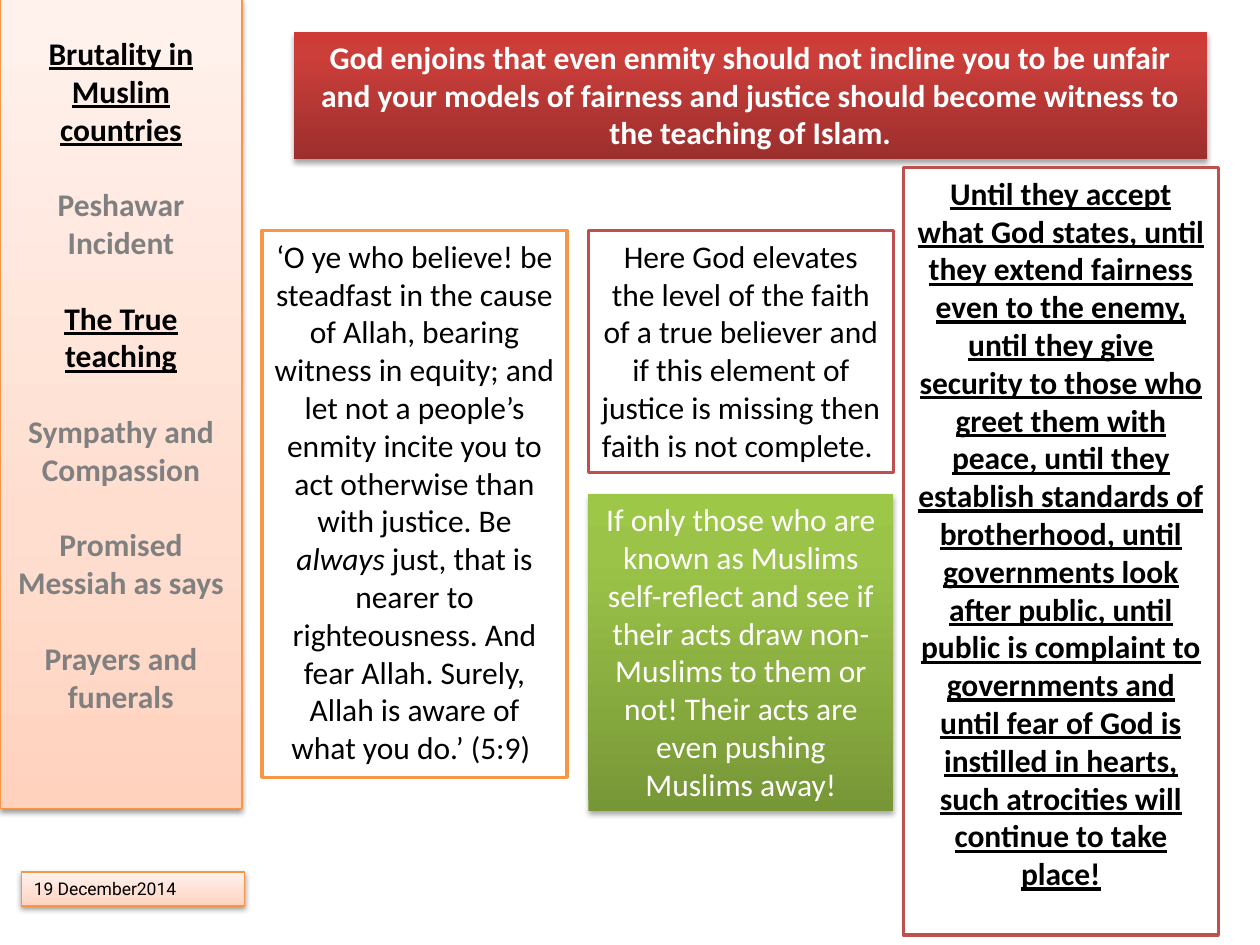
from copy import deepcopy
from dataclasses import dataclass

from lxml.etree import SubElement
from pptx import Presentation
from pptx.dml.color import RGBColor as RGB
from pptx.enum.shapes import MSO_SHAPE as Shape
from pptx.enum.text import MSO_ANCHOR as Anchor, MSO_AUTO_SIZE as AutoSize, PP_ALIGN as Align
from pptx.oxml.ns import qn
from pptx.util import Inches, Pt


@dataclass(frozen=True)
class Theme:
    font: str = "Calibri"
    date_font: str = "Roboto"
    body_size: float = 18
    date_size: float = 10
    black: str = "000000"
    white: str = "FFFFFF"
    muted: str = "808080"
    orange: str = "F79646"
    red: str = "C0504D"
    peach_fade: tuple = ((0, "FFD2BD"), (0.35, "FFDED0"), (1, "FFF2ED"))
    green_fade: tuple = ((0, "779737"), (0.8, "9BC348"), (1, "9DC746"))
    red_fade: tuple = ((0, "9C2F2D"), (0.8, "CB3E3A"), (1, "CE3B37"))


class SlideBuilder:
    def __init__(self, slide, theme):
        self.slide = slide
        self.theme = theme

    def place(self, shape, box):
        shape.left, shape.top, shape.width, shape.height = map(Inches, box)
        shape.shadow.inherit = False
        shape.line.fill.background()
        frame = shape.text_frame
        frame.word_wrap = True
        frame.auto_size = AutoSize.NONE
        frame.vertical_anchor = Anchor.TOP
        return shape

    def rectangle(self, box):
        return self.place(self.slide.shapes.add_shape(Shape.RECTANGLE, *map(Inches, box)), box)

    def outline(self, shape, color, width):
        shape.line.color.rgb = RGB.from_string(color)
        shape.line.width = Pt(width)

    def fade(self, shape, stops, shadow_distance, shadow_opacity):
        shape.fill.gradient()
        shape.fill.gradient_angle = 90
        properties = shape._element.spPr
        stop_list = properties.find(".//" + qn("a:gsLst"))
        stop_list.insert(1, deepcopy(stop_list[0]))
        for stop, (position, color) in zip(shape.fill.gradient_stops, stops):
            stop.position = position
            stop.color.rgb = RGB.from_string(color)
        shadow = SubElement(
            properties.find(qn("a:effectLst")), qn("a:outerShdw"),
            blurRad=str(Pt(3.1)), dist=str(Pt(shadow_distance)), dir="5400000", rotWithShape="0",
        )
        shade = SubElement(shadow, qn("a:srgbClr"), val=self.theme.black)
        SubElement(shade, qn("a:alpha"), val=str(shadow_opacity * 1000))

    def set_text(self, paragraph, text, color, bold=False, underline=False,
                 font=None, size=None, align=Align.CENTER):
        for index, part in enumerate(text.split("*")):
            run = paragraph.add_run()
            run.text = part
            if index % 2:
                run.font.italic = True
        paragraph.alignment = align
        style = paragraph.font
        style.name = font or self.theme.font
        style.size = Pt(size or self.theme.body_size)
        style.color.rgb = RGB.from_string(color)
        style.bold = bold
        style.underline = underline

    def title(self, text, box):
        banner = self.place(self.slide.shapes.title, box)
        self.fade(banner, self.theme.red_fade, 1.8, 35)
        self.set_text(banner.text_frame.paragraphs[0], text, self.theme.white, bold=True)

    def framed_text(self, text, box, border, emphasis=False):
        panel = self.rectangle(box)
        panel.fill.solid()
        panel.fill.fore_color.rgb = RGB.from_string(self.theme.white)
        self.outline(panel, border, 2)
        self.set_text(panel.text_frame.paragraphs[0], text, self.theme.black,
                      bold=emphasis, underline=emphasis)

    def filled_text(self, text, box):
        panel = self.rectangle(box)
        self.fade(panel, self.theme.green_fade, 1.8, 35)
        self.set_text(panel.text_frame.paragraphs[0], text, self.theme.white)

    def peach_panel(self, box):
        panel = self.rectangle(box)
        self.fade(panel, self.theme.peach_fade, 1.6, 38)
        self.outline(panel, self.theme.orange, 0.75)
        return panel.text_frame

    def sidebar(self, topics, active, box):
        frame = self.peach_panel(box)
        frame.margin_top = Inches(0.28)
        for index, topic in enumerate(topics):
            paragraph = frame.add_paragraph() if index else frame.paragraphs[0]
            paragraph.space_after = Pt(21.6)
            current = topic in active
            self.set_text(paragraph, topic, self.theme.black if current else self.theme.muted,
                          bold=True, underline=current)

    def date(self, text, box):
        frame = self.peach_panel(box)
        self.set_text(frame.paragraphs[0], text, self.theme.black, font=self.theme.date_font,
                      size=self.theme.date_size, align=Align.LEFT)


def main():
    presentation = Presentation()
    presentation.slide_width = Inches(10)
    presentation.slide_height = Inches(7.5)
    theme = Theme()
    builder = SlideBuilder(presentation.slides.add_slide(presentation.slide_layouts[5]), theme)

    column_top, column_width = 1.83, 2.42
    verse_left, faith_left = 2.08, 4.67

    builder.title(
        "God enjoins that even enmity should not incline you to be unfair and your models of "
        "fairness and justice should become witness to the teaching of Islam.",
        (2.33, 0.25, 7.25, 1.01),
    )
    builder.filled_text(
        "If only those who are known as Muslims self-reflect and see if their acts draw "
        "non-Muslims to them or not! Their acts are even pushing Muslims away!",
        (faith_left, 3.92, column_width, 2.52),
    )
    builder.framed_text(
        "Here God elevates the level of the faith of a true believer and if this element of "
        "justice is missing then faith is not complete. ",
        (faith_left, column_top, column_width, 1.92), theme.red,
    )
    builder.date("19 December2014", (0.17, 6.92, 1.77, 0.27))
    builder.framed_text(
        "‘O ye who believe! be steadfast in the cause of Allah, bearing witness in equity; "
        "and let not a people’s enmity incite you to act otherwise than with justice. "
        "Be *always* just, that is nearer to righteousness. And fear Allah. Surely, Allah is "
        "aware of what you do.’ (5:9) ",
        (verse_left, column_top, column_width, 4.34), theme.orange,
    )
    builder.sidebar(
        ("Brutality in Muslim countries", "Peshawar Incident", "The True teaching",
         "Sympathy and Compassion", "Promised Messiah as says", "Prayers and funerals"),
        ("Brutality in Muslim countries", "The True teaching"),
        (0, -0.01, 1.92, 6.43),
    )
    builder.framed_text(
        "Until they accept what God states, until they extend fairness even to the enemy, until "
        "they give security to those who greet them with peace, until they establish standards "
        "of brotherhood, until governments look after public, until public is complaint to "
        "governments and until fear of God is instilled in hearts, such atrocities will continue "
        "to take place!",
        (7.17, 1.33, 2.5, 6.09), theme.red, emphasis=True,
    )
    presentation.save("out.pptx")


if __name__ == "__main__":
    main()
